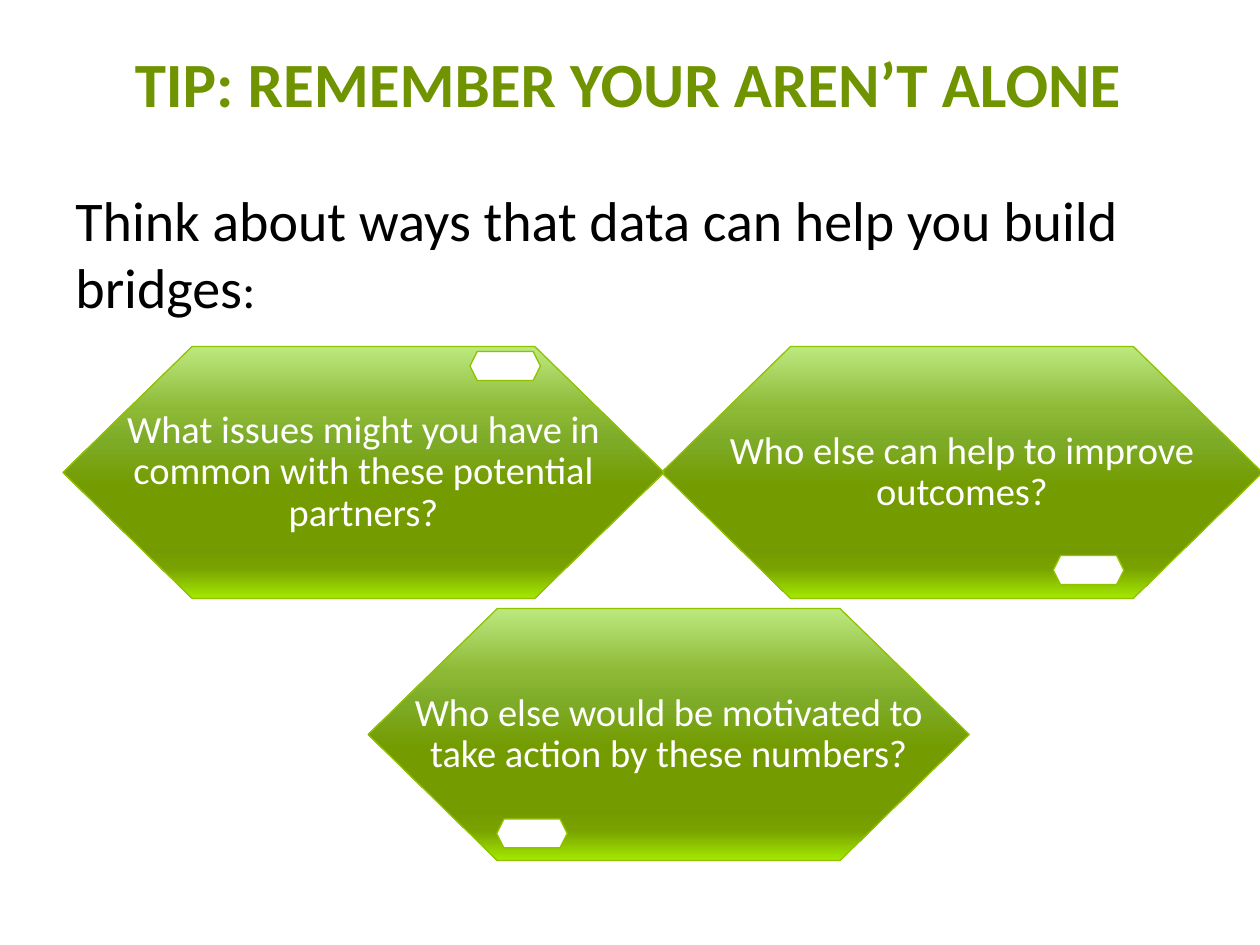
from dataclasses import dataclass

from lxml import etree
from pptx import Presentation
from pptx.dml.color import RGBColor as RGB
from pptx.enum.shapes import MSO_SHAPE as Preset
from pptx.enum.text import MSO_ANCHOR as Anchor, PP_ALIGN as Align
from pptx.oxml.ns import qn
from pptx.util import Inches, Pt


@dataclass(frozen=True)
class Theme:
    font: str = "Calibri"
    heading: str = "6F9400"
    ink: str = "000000"
    paper: str = "FFFFFF"
    outline: str = "91C200"
    outline_pt: float = 0.75
    heading_pt: int = 36
    lead_pt: int = 32
    colon_pt: int = 28
    tile_pt: int = 22
    # Percent down the tile, colour
    shading: tuple = ((0, "BCE97F"), (25, "8DB936"), (38, "7EAB27"), (55, "749B00"),
                      (80, "739A00"), (88, "79A200"), (100, "A3E900"))


THEME = Theme()
WIDTH, HEIGHT = 10, 7.5

# Tiles: size, and the row and column steps of the honeycomb
TILE_W, TILE_H = 4.77, 2
LEFT, TOP = 0.5, 2.75
COL_STEP, ROW_STEP = 4.75, 2.08
SHOULDER = 0.215  # share of tile width taken by each slanted side
ACCENT_W, ACCENT_H = 0.56, 0.23

# Wording, column, row, accent offset within the tile; from back to front
TILES = (
    ("Who else would be motivated to take action by these numbers?", 0.51, 1, (1.02, 1.67)),
    ("Who else can help to improve outcomes?", 1, 0, (3.11, 1.66)),
    ("What issues might you have in common with these potential partners?", 0, 0, (3.23, 0.04)),
)


def apply(target, formats):
    for name, value in formats.items():
        setattr(target, name, value)


def write(paragraph, wording, size, colour, bold=False):
    run = paragraph.add_run()
    run.text = wording
    apply(run.font, {"name": THEME.font, "size": Pt(size), "bold": bold})
    run.font.color.rgb = RGB.from_string(colour)


def outline(shape):
    shape.shadow.inherit = False
    shape.line.color.rgb = RGB.from_string(THEME.outline)
    shape.line.width = Pt(THEME.outline_pt)


def shade(shape):
    """Fill from top to bottom with the theme's shading."""
    shape.fill.gradient()
    gradient = shape._element.spPr.find(qn("a:gradFill"))
    for child in list(gradient):
        gradient.remove(child)
    stops = etree.SubElement(gradient, qn("a:gsLst"))
    for percent, colour in THEME.shading:
        stop = etree.SubElement(stops, qn("a:gs"), pos=str(percent * 1000))
        etree.SubElement(stop, qn("a:srgbClr"), val=colour)
    etree.SubElement(gradient, qn("a:lin"), ang="5400000", scaled="0")


def text_area(slide, box, anchor):
    frame = slide.shapes.add_textbox(*map(Inches, box)).text_frame
    apply(frame, {"word_wrap": True, "vertical_anchor": anchor})
    return frame.paragraphs[0]


def heading(slide, box):
    title = text_area(slide, box, Anchor.MIDDLE)
    title.alignment = Align.CENTER
    write(title, "TIP: REMEMBER YOUR AREN’T ALONE", THEME.heading_pt, THEME.heading, bold=True)


def lead_in(slide, box):
    lead = text_area(slide, box, Anchor.TOP)
    lead.space_before = Pt(18)
    write(lead, "Think about ways that data can help you build bridges", THEME.lead_pt, THEME.ink)
    write(lead, ":", THEME.colon_pt, THEME.ink)


def question_tile(slide, box, question):
    left, top, width, height = box
    corners = ((SHOULDER, 0), (1 - SHOULDER, 0), (1, 0.5),
               (1 - SHOULDER, 1), (SHOULDER, 1))
    points = [(Inches(left + x * width), Inches(top + y * height)) for x, y in corners]
    builder = slide.shapes.build_freeform(Inches(left), Inches(top + height / 2))
    builder.add_line_segments(points, close=True)
    tile = builder.convert_to_shape()
    shade(tile)
    outline(tile)
    side, end = Inches(0.29), Inches(0.27)
    apply(tile.text_frame, {"word_wrap": True, "vertical_anchor": Anchor.MIDDLE,
                            "margin_left": side, "margin_right": side,
                            "margin_top": end, "margin_bottom": end})
    paragraph = tile.text_frame.paragraphs[0]
    apply(paragraph, {"alignment": Align.CENTER, "line_spacing": 0.9})
    write(paragraph, question, THEME.tile_pt, THEME.paper)


def accent(slide, box):
    hexagon = slide.shapes.add_shape(Preset.HEXAGON, *map(Inches, box))
    hexagon.adjustments[0] = 0.25
    hexagon.fill.solid()
    hexagon.fill.fore_color.rgb = RGB.from_string(THEME.paper)
    outline(hexagon)


def honeycomb(slide, left, top):
    places = [(left + col * COL_STEP, top + row * ROW_STEP) for _, col, row, _ in TILES]
    for (question, *_), place in zip(TILES, places):
        question_tile(slide, (*place, TILE_W, TILE_H), question)
    # Accents lie above every tile
    for (*_, (dx, dy)), (x, y) in zip(TILES, places):
        accent(slide, (x + dx, y + dy, ACCENT_W, ACCENT_H))


def main():
    deck = Presentation()
    apply(deck, {"slide_width": Inches(WIDTH), "slide_height": Inches(HEIGHT)})
    slide = deck.slides.add_slide(deck.slide_layouts[6])
    heading(slide, (0.47, 0.25, 9.03, 0.8))
    lead_in(slide, (LEFT, 1.42, WIDTH - 2 * LEFT, 1.67))
    honeycomb(slide, LEFT, TOP)
    deck.save("out.pptx")


if __name__ == "__main__":
    main()
